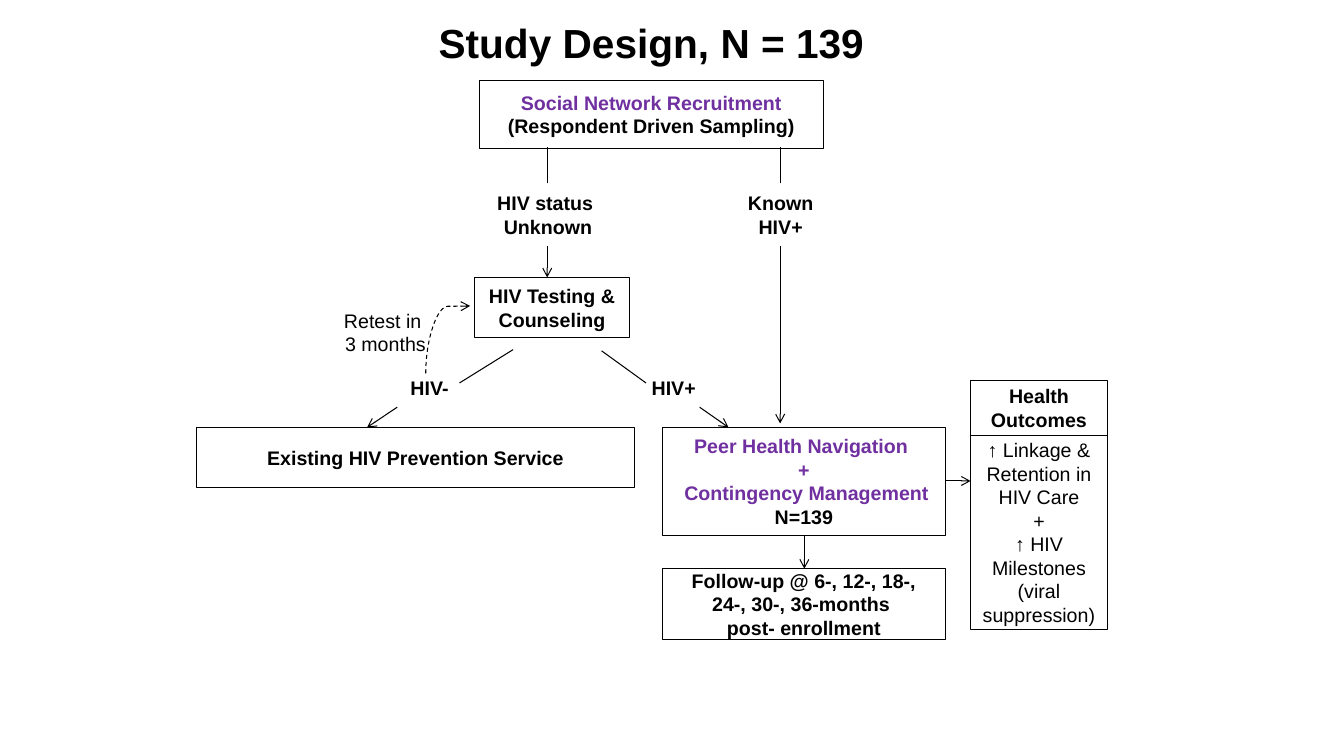
"""Build the study design flow chart slide."""
import pptx
import pptx.dml.color
import pptx.enum.dml
import pptx.enum.shapes
import pptx.enum.text
import pptx.oxml.ns
import pptx.util
from lxml import etree

Cm, Pt = pptx.util.Cm, pptx.util.Pt
MIDDLE = pptx.enum.text.MSO_ANCHOR.MIDDLE
TOP = pptx.enum.text.MSO_ANCHOR.TOP
CONNECTOR = pptx.enum.shapes.MSO_CONNECTOR
COLOURS = {"black": "000000", "purple": "7030A0"}

deck = pptx.Presentation()
deck.slide_width, deck.slide_height = Cm(33.87), Cm(19.05)
page = deck.slides.add_slide(deck.slide_layouts[6])


def colour(name):
    return pptx.dml.color.RGBColor.from_string(COLOURS[name])


def add_line(kind, start, end, arrow):
    line = page.shapes.add_connector(kind, *[Cm(value) for value in start + end])
    line.line.color.rgb = colour("black")
    line.line.width = Pt(0.75)
    properties = line._element.spPr
    if arrow:
        tail = etree.SubElement(line.line._get_or_add_ln(), pptx.oxml.ns.qn("a:tailEnd"))
        tail.set("type", "arrow")
    etree.SubElement(properties, pptx.oxml.ns.qn("a:effectLst"))
    return line


arrows = [
    ((13.79, 6.2), (13.79, 6.99)),
    ((19.66, 6.2), (19.66, 10.67)),
    ((10.01, 10.26), (9.25, 10.77)),
    ((17.63, 10.26), (18.36, 10.77)),
    ((20.27, 13.49), (20.27, 14.33)),
    ((23.85, 12.12), (24.46, 12.12)),
]
plain_lines = [
    ((13.79, 4.62), (13.79, 3.71)),
    ((19.66, 4.62), (19.66, 3.71)),
    ((11.58, 9.65), (12.93, 8.81)),
    ((16.28, 9.65), (15.16, 8.84)),
]
for has_arrow, lines in ((True, arrows), (False, plain_lines)):
    for start, end in lines:
        add_line(CONNECTOR.STRAIGHT, start, end, has_arrow)

retest_loop = add_line(CONNECTOR.CURVE, (12.14, 9.12), (10.44, 8), True)
retest_loop.line.dash_style = pptx.enum.dml.MSO_LINE.DASH
retest_loop._element.spPr.find(pptx.oxml.ns.qn("a:xfrm")).set("rot", "5400000")
geometry = retest_loop._element.spPr.find(pptx.oxml.ns.qn("a:prstGeom"))
adjustments = geometry.find(pptx.oxml.ns.qn("a:avLst"))
bend = etree.SubElement(adjustments, pptx.oxml.ns.qn("a:gd"))
bend.set("name", "adj1")
bend.set("fmla", "val 99500")

framed_boxes = [
    ((12.07, 2.03, 8.69, 1.7), True,
     [("Social Network Recruitment", "purple"), ("(Respondent Driven Sampling)", "black")]),
    ((11.96, 6.99, 3.91, 1.52), True, [("HIV Testing & Counseling", "black")]),
    ((4.95, 10.77, 11.05, 1.52), True, [("Existing HIV Prevention Service", "black")]),
    ((16.69, 10.77, 7.14, 2.72), True,
     [("Peer Health Navigation ", "purple"), ("+", "purple"),
      (" Contingency Management", "purple"), ("N=139", "black")]),
    ((16.69, 14.33, 7.14, 1.78), True,
     [("Follow-up @ 6-, 12-, 18-, 24-, 30-, 36-months ", "black"),
      ("post- enrollment", "black")]),
    ((24.46, 9.58, 3.45, 1.4), True, [("Health Outcomes", "black")]),
    ((24.46, 10.97, 3.45, 4.88), False,
     [("↑ Linkage & Retention in HIV Care", "black"), ("+", "black"),
      ("↑ HIV Milestones (viral suppression)", "black")]),
]
labels = [
    ((3.63, 0.33, 25.58, 1.5), True, [("Study Design, N = 139", "black")], 29, TOP),
    ((12.07, 4.62, 3.48, 1.57), True,
     [("HIV status ", "black"), ("Unknown", "black")], 14, MIDDLE),
    ((18.39, 4.62, 2.57, 1.57), True, [("Known HIV+", "black")], 14, MIDDLE),
    ((8.28, 7.65, 2.87, 1.68), False,
     [("Retest in ", "black"), ("3 months", "black")], 14, TOP),
    ((9.58, 9.25, 2.49, 1.04), True, [("HIV-", "black")], 14, MIDDLE),
    ((15.85, 9.25, 2.26, 1.04), True, [("HIV+", "black")], 14, MIDDLE),
]

text_holders = []
for place, bold, content in framed_boxes:
    box = page.shapes.add_shape(
        pptx.enum.shapes.MSO_SHAPE.RECTANGLE, *[Cm(value) for value in place])
    box.shadow.inherit = False
    box.fill.background()
    box.line.color.rgb = colour("black")
    box.line.width = Pt(0.5)
    text_holders.append((box, bold, content, 14, MIDDLE))
for place, *style in labels:
    box = page.shapes.add_textbox(*[Cm(value) for value in place])
    text_holders.append((box, *style))

for box, bold, content, size, anchor in text_holders:
    frame = box.text_frame
    frame.word_wrap = True
    frame.vertical_anchor = anchor
    for index, (words, shade) in enumerate(content):
        para = frame.add_paragraph() if index else frame.paragraphs[0]
        para.alignment = pptx.enum.text.PP_ALIGN.CENTER
        span = para.add_run()
        span.text = words
        span.font.name = "Arial"
        span.font.size = Pt(size)
        span.font.bold = bold
        span.font.color.rgb = colour(shade)

deck.save("out.pptx")
